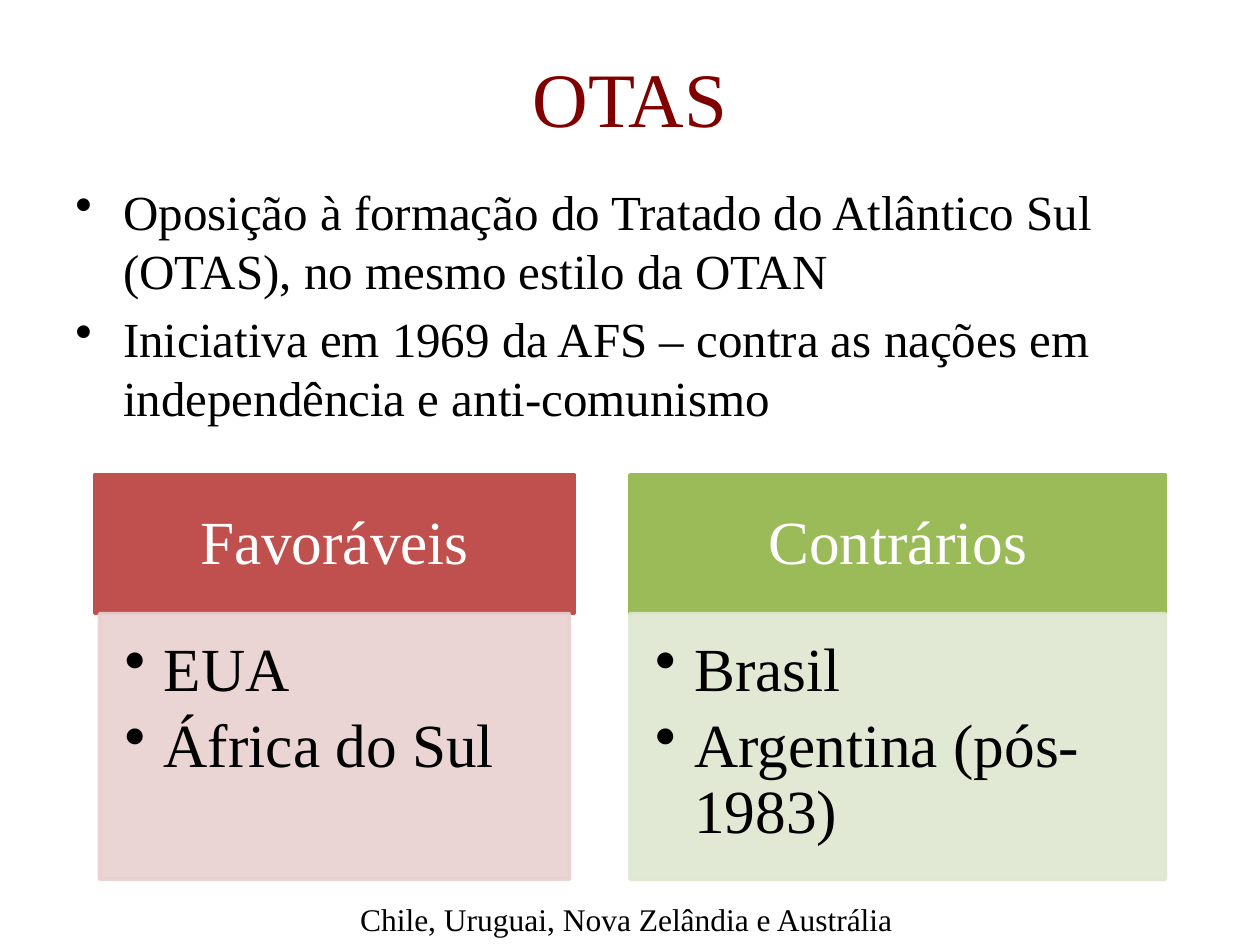
from lxml.etree import SubElement
from pptx import Presentation
from pptx.dml.color import RGBColor
from pptx.enum.shapes import MSO_SHAPE
from pptx.enum.text import MSO_ANCHOR, PP_ALIGN
from pptx.oxml.ns import qn
from pptx.util import Inches, Pt

FONT = "Times New Roman"
TITLE = "OTAS"
POINTS = [
    "Oposição à formação do Tratado do Atlântico Sul (OTAS), no mesmo estilo da OTAN",
    "Iniciativa em 1969 da AFS – contra as nações em independência e anti-comunismo",
]
COLUMNS = [
    {"heading": "Favoráveis", "items": ["EUA", "África do Sul"],
     "left": 0.75, "width": 3.81, "inset": 0.04, "dark": "C0504D", "light": "E8D0D0"},
    {"heading": "Contrários", "items": ["Brasil", "Argentina (pós- 1983)"],
     "left": 5, "width": 4.25, "inset": 0, "dark": "9BBB59", "light": "DEE7D1"},
]
FOOTNOTE = "Chile, Uruguai, Nova Zelândia e Austrália"
HEAD_TOP, HEAD_HEIGHT, LIST_HEIGHT = 3.77, 1.1, 2.11


def color(value):
    return RGBColor.from_string(value)


def write(box, lines, size, ink="000000", align=PP_ALIGN.LEFT, anchor=MSO_ANCHOR.TOP,
          margins=(0.1, 0.05, 0.1, 0.05), wrap=True, indent=0, before=0, after=0, spacing=1):
    frame = box.text_frame
    frame.word_wrap = wrap
    frame.vertical_anchor = anchor
    (frame.margin_left, frame.margin_top,
     frame.margin_right, frame.margin_bottom) = map(Inches, margins)
    for number, line in enumerate(lines):
        para = frame.add_paragraph() if number else frame.paragraphs[0]
        para.text = line
        para.alignment = align
        para.line_spacing = spacing
        para.space_before, para.space_after = Pt(before), Pt(after)
        para.font.name, para.font.size = FONT, Pt(size)
        para.font.color.rgb = color(ink)
        if indent:
            add_bullet(para, indent)


def add_bullet(para, indent):
    properties = para._p.get_or_add_pPr()
    properties.set("marL", str(Inches(indent)))
    properties.set("indent", str(-Inches(indent)))
    bullet = properties.makeelement(qn("a:buChar"), {"char": "•"})
    properties.find(qn("a:defRPr")).addprevious(bullet)


def add_text(page, area, lines, size, **style):
    box = page.shapes.add_textbox(*map(Inches, area))
    write(box, lines, size, **style)


def add_panel(page, area, fill, opacity=100):
    panel = page.shapes.add_shape(MSO_SHAPE.RECTANGLE, *map(Inches, area))
    panel.shadow.inherit = False
    panel.fill.solid()
    panel.fill.fore_color.rgb = color(fill)
    panel.line.color.rgb = color(fill)
    panel.line.width = Pt(2)
    if opacity < 100:
        for tint in panel._element.spPr.iter(qn("a:srgbClr")):
            SubElement(tint, qn("a:alpha"), val=str(opacity * 1000))
    return panel


def add_column(page, column):
    left, width, inset = column["left"], column["width"], column["inset"]
    heading = add_panel(page, (left, HEAD_TOP, width, HEAD_HEIGHT), column["dark"])
    write(heading, [column["heading"]], 35, ink="FFFFFF", align=PP_ALIGN.CENTER,
          anchor=MSO_ANCHOR.MIDDLE, margins=(0.27, 0.16, 0.27, 0.16), spacing=0.9)
    area = (left + inset, HEAD_TOP + HEAD_HEIGHT, width - 2 * inset, LIST_HEIGHT)
    listing = add_panel(page, area, column["light"], opacity=90)
    write(listing, column["items"], 35, margins=(0.2, 0.2, 0.27, 0.31),
          indent=0.31, after=5.25, spacing=0.9)


def main():
    deck = Presentation()
    deck.slide_width, deck.slide_height = Inches(10), Inches(7.5)
    page = deck.slides.add_slide(deck.slide_layouts[6])
    add_text(page, (0.5, 0.3, 9, 0.93), [TITLE], 44, ink="800000",
             align=PP_ALIGN.CENTER, anchor=MSO_ANCHOR.MIDDLE)
    add_text(page, (0.5, 1.39, 9, 5.31), POINTS, 28, indent=0.38, before=5.6)
    for column in COLUMNS:
        add_column(page, column)
    add_text(page, (2.76, 7.09, 4.47, 0.4), [FOOTNOTE], 18, wrap=False)
    deck.save("out.pptx")


if __name__ == "__main__":
    main()
